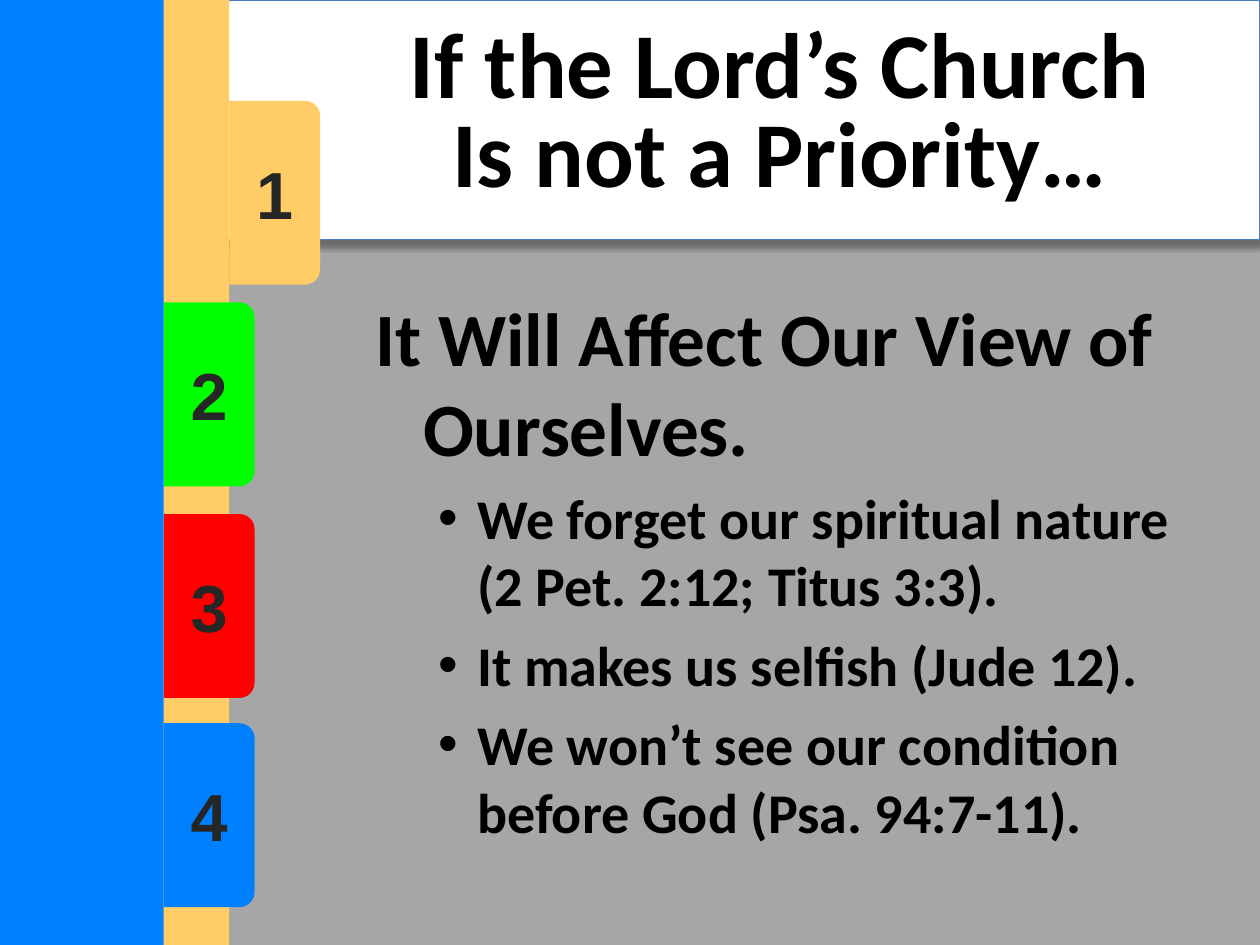
from pptx import Presentation
from pptx.dml.color import RGBColor
from pptx.enum.shapes import MSO_SHAPE
from pptx.enum.text import MSO_ANCHOR, PP_ALIGN
from pptx.oxml import parse_xml
from pptx.oxml.ns import nsdecls
from pptx.util import Inches, Pt

THEME = {
    "back": "A6A6A6", "panel": "FFFFFF", "edge": "4B7EBC", "ink": "000000",
    "digit": "262626", "gold": "FFCC66", "blue": "0080FF",
    "green": "00FF00", "red": "FF0000",
    "font": "Calibri", "tabfont": "Arial",
    "title": 53, "head": 43, "point": 32, "tab": 38, "gap": 7,
}
TITLE = "If the Lord’s Church Is not a Priority…"
HEAD = "It Will Affect Our View of Ourselves."
POINTS = [
    "We forget our spiritual nature (2 Pet. 2:12; Titus 3:3).",
    "It makes us selfish (Jude 12).",
    "We won’t see our condition before God (Psa. 94:7-11).",
]
# label, colour, left edge, middle height
WIDE, HIGH = 10, 7.5
SPINE, STRIPE = 1.3, 1.82
TABS = [
    ("1", "gold", STRIPE, 1.53),
    ("2", "green", SPINE, 3.13),
    ("3", "red", SPINE, 4.81),
    ("4", "blue", SPINE, 6.47),
]
LONG, DEEP = 1.46, 0.72
TEXT = 2.88

deck = Presentation()
deck.slide_width, deck.slide_height = Inches(WIDE), Inches(HIGH)
slide = deck.slides.add_slide(deck.slide_layouts[6])


def tint(name):
    return RGBColor.from_string(THEME[name])


def block(kind, box, color):
    shape = slide.shapes.add_shape(kind, *map(Inches, box))
    shape.shadow.inherit = False
    shape.fill.solid()
    shape.fill.fore_color.rgb = tint(color)
    shape.line.fill.background()
    return shape


def frame(box, anchor):
    text = slide.shapes.add_textbox(*map(Inches, box)).text_frame
    text.word_wrap = True
    text.vertical_anchor = anchor
    return text


def write(para, words, size, font="font", color="ink"):
    run = para.add_run()
    run.text = words
    run.font.name = THEME[font]
    run.font.size = Pt(THEME[size])
    run.font.bold = True
    run.font.color.rgb = tint(color)


def indent(para, left, hang, mark=None):
    props = para._p.get_or_add_pPr()
    props.set("marL", str(Inches(left)))
    props.set("indent", str(-Inches(hang)))
    if mark:
        props.append(parse_xml(f'<a:buFont {nsdecls("a")} typeface="Arial"/>'))
        props.append(parse_xml(f'<a:buChar {nsdecls("a")} char="{mark}"/>'))


def shade(shape):
    """Give the shape a soft shadow below."""
    shape.shadow.inherit = False
    props = shape._element.spPr
    props.remove(props.find("{*}effectLst"))
    props.append(parse_xml(
        f'<a:effectLst {nsdecls("a")}>'
        f'<a:outerShdw blurRad="{Pt(3.1)}" dist="{Pt(4)}" dir="{83 * 60000}" rotWithShape="0">'
        '<a:srgbClr val="000000"><a:alpha val="35000"/></a:srgbClr>'
        '</a:outerShdw></a:effectLst>'))


slide.background.fill.solid()
slide.background.fill.fore_color.rgb = tint("back")

panel = block(MSO_SHAPE.RECTANGLE, (0, 0, WIDE, 1.9), "panel")
panel.line.color.rgb = tint("edge")
panel.line.width = Pt(0.75)
shade(panel)
block(MSO_SHAPE.RECTANGLE, (0.52, 0, STRIPE - 0.52, HIGH), "gold")

for label, color, left, mid in TABS:
    # A quarter turn about the centre swaps the sides.
    tab = block(MSO_SHAPE.ROUND_2_SAME_RECTANGLE,
                (left + (DEEP - LONG) / 2, mid - DEEP / 2, LONG, DEEP), color)
    tab.rotation = 90
    para = frame((left, mid - 0.37, DEEP, 0.74), MSO_ANCHOR.MIDDLE).paragraphs[0]
    para.alignment = PP_ALIGN.CENTER
    write(para, label, "tab", "tabfont", "digit")

block(MSO_SHAPE.RECTANGLE, (0, 0, SPINE, HIGH), "blue")

para = frame((TEXT, 0.3, 6.62, 1.25), MSO_ANCHOR.MIDDLE).paragraphs[0]
para.alignment = PP_ALIGN.CENTER
para.line_spacing = 0.8
write(para, TITLE, "title")

body = frame((TEXT, 2.26, 6.7, 4.94), MSO_ANCHOR.TOP)
para = body.paragraphs[0]
indent(para, 0.38, 0.38)
write(para, HEAD, "head")
for point in POINTS:
    para = body.add_paragraph()
    para.level = 1
    indent(para, 0.81, 0.31, "•")
    para.space_before = Pt(THEME["gap"])
    write(para, point, "point")

deck.save("out.pptx")
